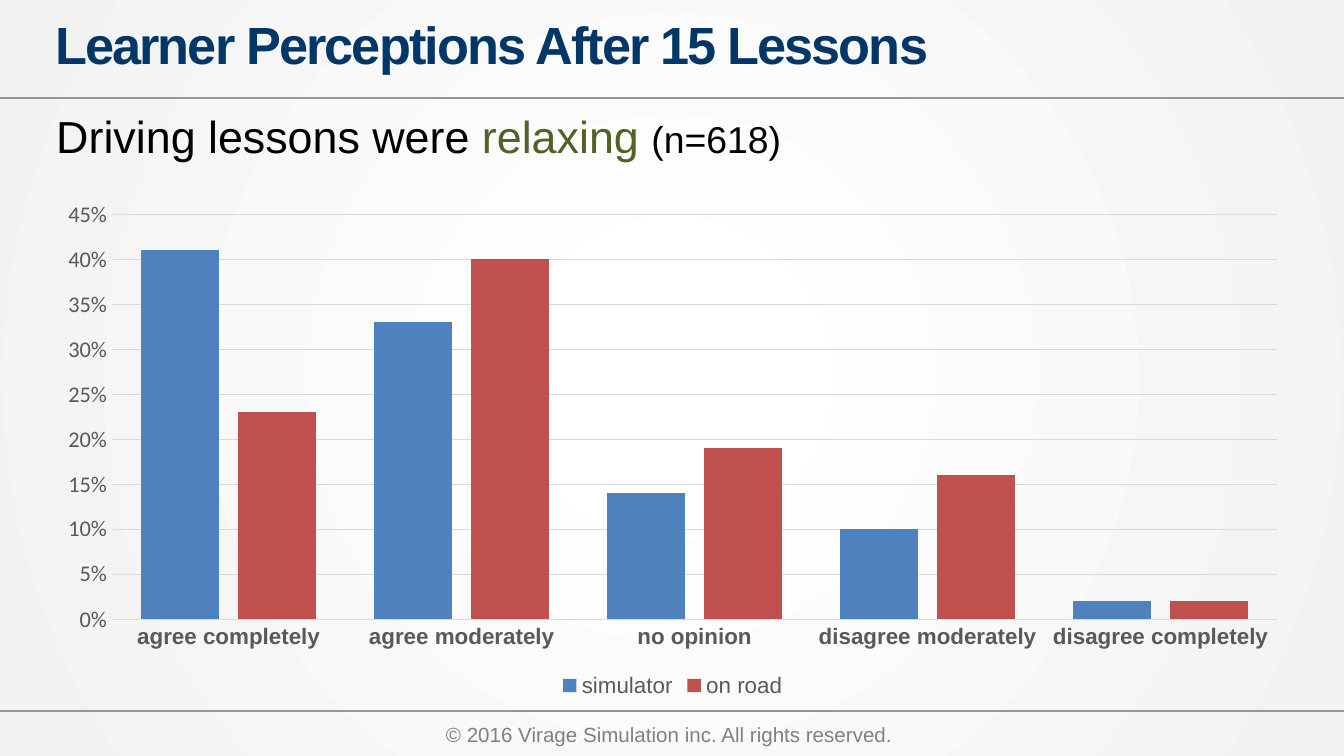
from pptx import Presentation
from pptx.chart.data import CategoryChartData
from pptx.dml.color import RGBColor
from pptx.enum.chart import XL_CHART_TYPE as ChartType, XL_LEGEND_POSITION as LegendPosition, XL_TICK_MARK as TickMark
from pptx.enum.shapes import MSO_CONNECTOR as Connector
from pptx.enum.text import MSO_ANCHOR as Anchor, MSO_AUTO_SIZE as AutoSize, PP_ALIGN as Align
from pptx.oxml import parse_xml
from pptx.oxml.ns import nsdecls, qn
from pptx.util import Inches, Pt

COLORS = {
    "background": "FFFFFF", "edge": "F2F2F2", "rule": "8C9B93",
    "footer": "808080", "title": "003768", "text": "000000",
    "accent": "4F6228", "axis": "595959", "grid": "D9D9D9",
    "simulator": "4F81BD", "on road": "C0504D",
}


def color(name):
    return RGBColor.from_string(COLORS[name])


def format_font(font, size, color_name, name="Arial", bold=False):
    font.name = name
    font.size = Pt(size)
    font.bold = bold
    font.color.rgb = color(color_name)


# Widescreen slide, 16:9
presentation = Presentation()
presentation.slide_width = Inches(10)
presentation.slide_height = Inches(10) * 9 // 16
slide = presentation.slides.add_slide(presentation.slide_layouts[5])

# Background: radial gradient from the centre
fill = slide.background.fill
fill.gradient()
for stop, position, name in zip(fill.gradient_stops, (0.08, 1), ("background", "edge")):
    stop.position = position
    stop.color.rgb = color(name)
gradient = slide.element.find(".//" + qn("a:gradFill"))
gradient.replace(gradient.find(qn("a:lin")), parse_xml(
    f'<a:path {nsdecls("a")} path="circle">'
    '<a:fillToRect l="50000" t="50000" r="50000" b="50000"/></a:path>'))

# Rules under the title and above the footer
for top in (0.73, 5.29):
    rule = slide.shapes.add_connector(
        Connector.STRAIGHT, Inches(10), Inches(top), Inches(0), Inches(top))
    rule.line.color.rgb = color("rule")
    rule.line.width = Pt(0.75)
    rule.element.spPr.append(parse_xml(f'<a:effectLst {nsdecls("a")}/>'))

# Footer
footer = slide.shapes.add_textbox(Inches(3.22), Inches(5.32), Inches(3.56), Inches(0.29))
footer.text_frame.word_wrap = False
footer.text_frame.auto_size = AutoSize.SHAPE_TO_FIT_TEXT
run = footer.text_frame.paragraphs[0].add_run()
run.text = "© 2016 Virage Simulation inc. All rights reserved."
format_font(run.font, 11, "footer")

# Title
title = slide.shapes.title
title.left, title.top = Inches(0.31), Inches(0.06)
title.width, title.height = Inches(7.47), Inches(0.53)
title.text_frame.auto_size = AutoSize.NONE
title.text_frame.vertical_anchor = Anchor.MIDDLE
paragraph = title.text_frame.paragraphs[0]
paragraph.alignment = Align.LEFT
run = paragraph.add_run()
run.text = "Learner Perceptions After 15 Lessons"
format_font(run.font, 28, "title", bold=True)
title.element.find(".//" + qn("a:rPr")).set("spc", "-100")

# Statement that learners rated
statement = slide.shapes.add_textbox(Inches(0.32), Inches(0.76), Inches(9.22), Inches(0.5))
statement.text_frame.word_wrap = True
statement.text_frame.auto_size = AutoSize.SHAPE_TO_FIT_TEXT
for text, size, name in (("Driving lessons were ", 24, "text"),
                         ("relaxing ", 24, "accent"),
                         ("(n=618)", 20, "text")):
    run = statement.text_frame.paragraphs[0].add_run()
    run.text = text
    format_font(run.font, size, name)

# Chart data
data = CategoryChartData(number_format="0%")
data.categories = ["agree completely", "agree moderately", "no opinion",
                   "disagree moderately", "disagree completely"]
data.add_series("simulator", (0.41, 0.33, 0.14, 0.1, 0.02))
data.add_series("on road", (0.23, 0.4, 0.19, 0.16, 0.02))
chart = slide.shapes.add_chart(
    ChartType.COLUMN_CLUSTERED,
    Inches(0.32), Inches(1.42), Inches(9.37), Inches(3.81), data).chart
chart.has_title = False
format_font(chart.font, 10, "text", "Calibri")

# Columns
plot = chart.plots[0]
plot.gap_width = 75
plot.overlap = -25
plot.vary_by_categories = False
for series in plot.series:
    series.format.fill.solid()
    series.format.fill.fore_color.rgb = color(series.name)

# Axes
category_axis, value_axis = chart.category_axis, chart.value_axis
for axis in (category_axis, value_axis):
    axis.major_tick_mark = axis.minor_tick_mark = TickMark.NONE
format_font(category_axis.tick_labels.font, 12, "axis", bold=True)
format_font(value_axis.tick_labels.font, 12, "axis", "Calibri")
value_axis.minimum_scale, value_axis.maximum_scale = 0, 0.45
value_axis.major_unit = 0.05
value_axis.tick_labels.number_format = "0%"
value_axis.tick_labels.number_format_is_linked = False
value_axis.format.line.fill.background()
for line in (category_axis.format.line, value_axis.major_gridlines.format.line):
    line.color.rgb = color("grid")
    line.width = Pt(0.75)

# Legend
chart.has_legend = True
chart.legend.position = LegendPosition.BOTTOM
chart.legend.include_in_layout = False
format_font(chart.legend.font, 12, "axis")

presentation.save("out.pptx")
